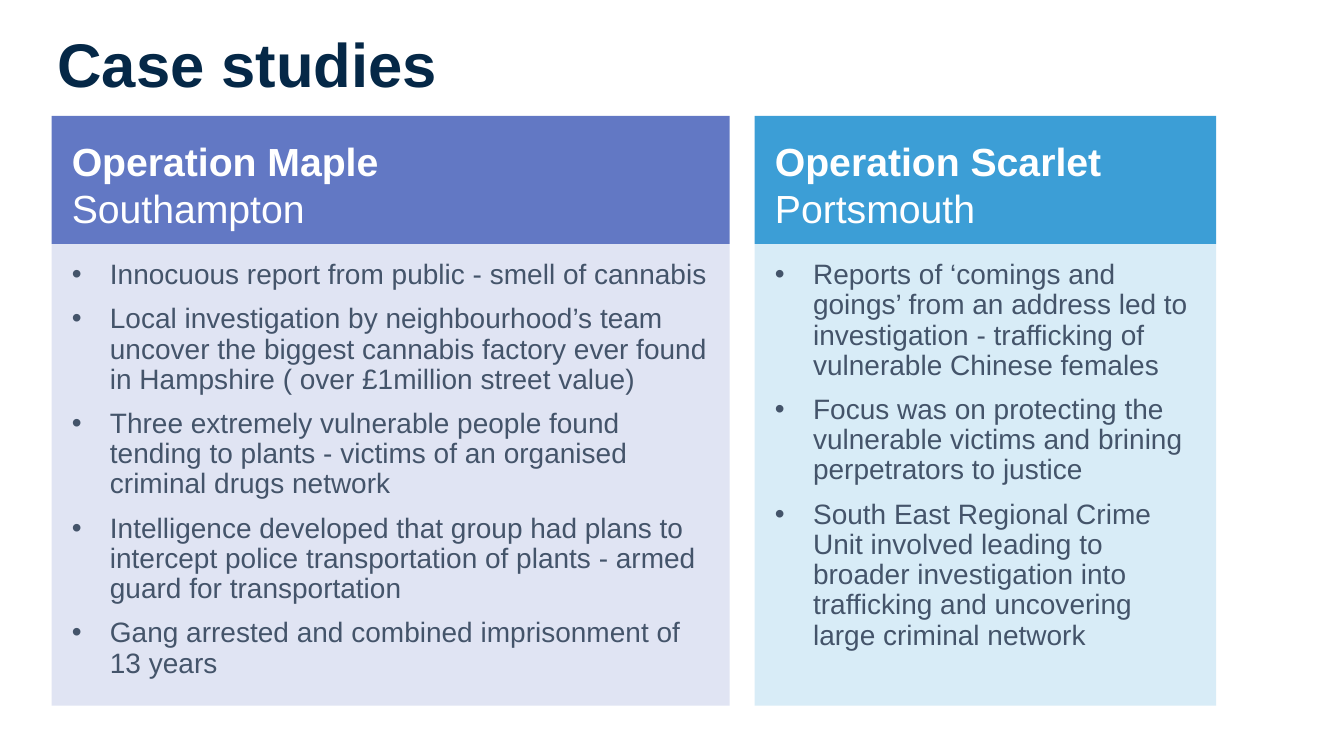
from dataclasses import dataclass

from lxml import etree
from pptx import Presentation
from pptx.dml.color import RGBColor
from pptx.enum.shapes import MSO_SHAPE
from pptx.enum.text import MSO_ANCHOR, MSO_AUTO_SIZE, PP_ALIGN
from pptx.oxml.ns import qn
from pptx.util import Cm, Pt

RECTANGLE = MSO_SHAPE.RECTANGLE
TOP, MIDDLE = MSO_ANCHOR.TOP, MSO_ANCHOR.MIDDLE
NO_AUTOFIT = MSO_AUTO_SIZE.NONE
LEFT = PP_ALIGN.LEFT

NAVY = RGBColor(0x05, 0x28, 0x47)
SLATE = RGBColor(0x44, 0x54, 0x6A)
WHITE = RGBColor(0xFF, 0xFF, 0xFF)
INDIGO = RGBColor(0x62, 0x78, 0xC4)
PALE_INDIGO = RGBColor(0xE0, 0xE4, 0xF3)
BLUE = RGBColor(0x3C, 0x9E, 0xD6)
PALE_BLUE = RGBColor(0xD8, 0xEC, 0xF7)

FONT = "Arial"
HEADER_TOP, HEADER_HEIGHT = Cm(2.92), Cm(3.23)
LIST_TOP, LIST_HEIGHT = HEADER_TOP + HEADER_HEIGHT, Cm(11.63)
SIDE_INSET, TOP_INSET = Cm(0.51), Cm(0.41)
BULLET_INDENT = Cm(0.96)


@dataclass(frozen=True)
class CaseStudy:
    operation: str
    city: str
    points: tuple[str, ...]
    left: Cm
    width: Cm
    header_fill: RGBColor
    list_fill: RGBColor


CASE_STUDIES = (
    CaseStudy(
        "Operation Maple", "Southampton",
        (
            "Innocuous report from public - smell of cannabis",
            "Local investigation by neighbourhood’s team uncover the biggest "
            "cannabis factory ever found in Hampshire ( over £1million street value)",
            "Three extremely vulnerable people found tending to plants - "
            "victims of an organised criminal drugs network",
            "Intelligence developed that group had plans to intercept police "
            "transportation of plants - armed guard for transportation",
            "Gang arrested and combined imprisonment of 13 years",
        ),
        Cm(1.3), Cm(17.09), INDIGO, PALE_INDIGO,
    ),
    CaseStudy(
        "Operation Scarlet", "Portsmouth",
        (
            "Reports of ‘comings and goings’ from an address led to "
            "investigation - trafficking of vulnerable Chinese females",
            "Focus was on protecting the vulnerable victims and brining "
            "perpetrators to justice",
            "South East Regional Crime Unit involved leading to broader "
            "investigation into trafficking and uncovering large criminal network",
        ),
        Cm(19.02), Cm(11.63), BLUE, PALE_BLUE,
    ),
)


def place(box, left: int, top: int, width: int, height: int) -> None:
    box.left, box.top, box.width, box.height = left, top, width, height


def fill_panel(box, colour: RGBColor, anchor: MSO_ANCHOR, bottom_inset: int) -> None:
    box.fill.solid()
    box.fill.fore_color.rgb = colour
    box.line.fill.background()
    frame = box.text_frame
    frame.word_wrap = True
    frame.auto_size = NO_AUTOFIT
    frame.vertical_anchor = anchor
    frame.margin_left = frame.margin_right = SIDE_INSET
    frame.margin_top, frame.margin_bottom = TOP_INSET, bottom_inset


def style_text(para, size: int, colour: RGBColor) -> None:
    para.alignment = LEFT
    para.font.name = FONT
    para.font.size = Pt(size)
    para.font.color.rgb = colour


def add_bullet(para) -> None:
    properties = para._p.get_or_add_pPr()
    properties.set("marL", str(BULLET_INDENT))
    properties.set("indent", str(-BULLET_INDENT))
    etree.SubElement(properties, qn("a:buFont")).set("typeface", FONT)
    etree.SubElement(properties, qn("a:buChar")).set("char", "•")


def add_header(page, study: CaseStudy) -> None:
    box = page.shapes.add_shape(
        RECTANGLE, study.left, HEADER_TOP, study.width, HEADER_HEIGHT)
    box.shadow.inherit = False
    fill_panel(box, study.header_fill, MIDDLE, Cm(0.2))
    para = box.text_frame.paragraphs[0]
    style_text(para, 28, WHITE)
    operation = para.add_run()
    operation.text = study.operation
    operation.font.bold = True
    para.add_line_break()
    city = para.add_run()
    city.text = study.city
    city.font.bold = False


def fill_list(box, study: CaseStudy) -> None:
    place(box, study.left, LIST_TOP, study.width, LIST_HEIGHT)
    fill_panel(box, study.list_fill, TOP, TOP_INSET)
    frame = box.text_frame
    for number, point in enumerate(study.points):
        para = frame.add_paragraph() if number else frame.paragraphs[0]
        para.text = point
        para.line_spacing = 0.9
        para.space_before = Pt(10 if number else 0)
        add_bullet(para)
        style_text(para, 20, SLATE)


def add_title(page, text: str) -> None:
    title = page.shapes.title
    place(title, Cm(1.19), Cm(0.58), Cm(25.4), Cm(2.24))
    title.text_frame.text = text
    title.text_frame.auto_size = NO_AUTOFIT
    title.text_frame.vertical_anchor = MIDDLE
    para = title.text_frame.paragraphs[0]
    para.line_spacing = 0.9
    style_text(para, 44, NAVY)
    para.font.bold = True


def main() -> None:
    deck = Presentation()
    deck.slide_width, deck.slide_height = Cm(33.87), Cm(19.05)
    page = deck.slides.add_slide(deck.slide_layouts.get_by_name("Two Content"))

    # Title
    add_title(page, "Case studies")

    # One column for each case study
    for number, study in enumerate(CASE_STUDIES, start=1):
        fill_list(page.placeholders[number], study)
        add_header(page, study)

    deck.save("out.pptx")


if __name__ == "__main__":
    main()
